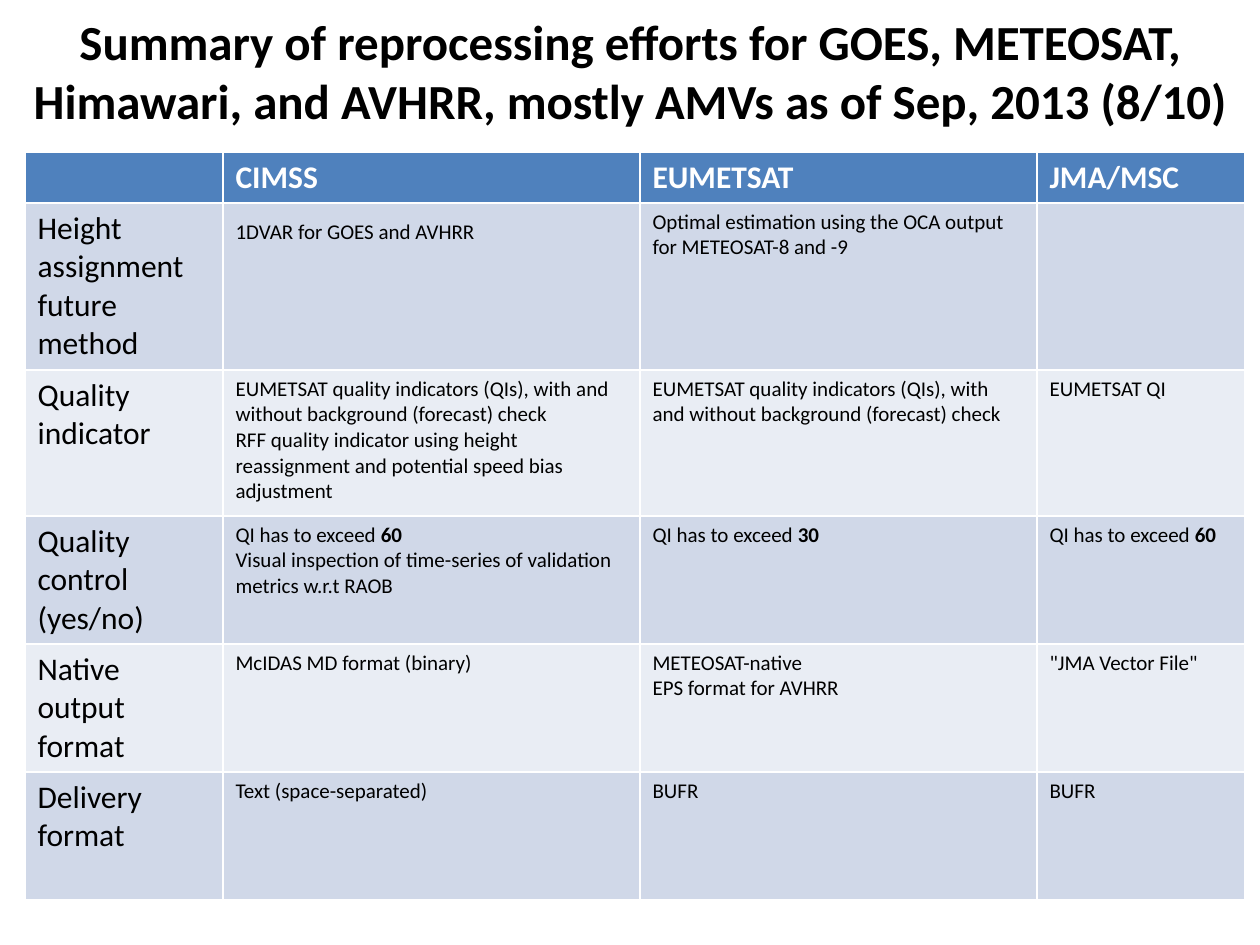
"""Build a slide with a table that sums up wind reprocessing efforts."""
from pptx import Presentation
from pptx.dml.color import RGBColor as RGB
from pptx.enum.text import MSO_ANCHOR as ANCHOR, MSO_AUTO_SIZE as AUTO, PP_ALIGN as ALIGN
from pptx.util import Pt

TITLE = ("Summary of reprocessing efforts for GOES, METEOSAT, Himawari, "
         "and AVHRR, mostly AMVs as of Sep, 2013 (8/10)")
QI = "EUMETSAT quality indicators (QIs), with and without background (forecast) check"
ROWS = [
    ["", "CIMSS", "EUMETSAT", "JMA/MSC"],
    ["Height assignment future method", "1DVAR for GOES and AVHRR",
     "Optimal estimation using the OCA output for METEOSAT-8 and -9", ""],
    ["Quality indicator",
     QI + "\nRFF quality indicator using height reassignment "
     "and potential speed bias adjustment", QI, "EUMETSAT QI"],
    ["Quality control (yes/no)",
     "QI has to exceed **60**\nVisual inspection of time-series "
     "of validation metrics w.r.t RAOB",
     "QI has to exceed **30**", "QI has to exceed **60**"],
    ["Native output format", "McIDAS MD format (binary)",
     "METEOSAT-native\nEPS format for AVHRR", '"JMA Vector File"'],
    ["Delivery format", "Text (space-separated)", "BUFR", "BUFR"],
]
WIDTHS = [198, 417, 397, 208]
HEIGHTS = [50, 167, 146, 128, 128, 128]
LOW_CELL, LOW_TOP = (1, 1), 16

BLACK, WHITE = RGB(0, 0, 0), RGB(255, 255, 255)
BLUE = RGB(0x4F, 0x81, 0xBD)
BANDS = [RGB(0xE9, 0xED, 0xF4), RGB(0xD0, 0xD8, 0xE8)]
FONT = "Calibri"
SCALE = 914400 / 126


def px(num):
    return round(num * SCALE)


def write(frame, text, size=12, color=BLACK, bold=False, align=ALIGN.LEFT):
    for i, line in enumerate(text.split("\n")):
        para = frame.add_paragraph() if i else frame.paragraphs[0]
        para.alignment = align
        para.font.size = Pt(size)
        for j, part in enumerate(line.split("**")):
            if part:
                run = para.add_run()
                run.text = part
                font = run.font
                font.name, font.size = FONT, Pt(size)
                font.bold = bold or j % 2 == 1
                font.color.rgb = color


def add_title(slide):
    title = slide.shapes.title
    title.left, title.top, title.width, title.height = map(px, (0, 6, 1260, 129))
    frame = title.text_frame
    frame.auto_size = AUTO.NONE
    frame.vertical_anchor = ANCHOR.MIDDLE
    write(frame, TITLE, size=28, bold=True, align=ALIGN.CENTER)


def add_grid(slide):
    box = map(px, (25, 152, sum(WIDTHS), sum(HEIGHTS)))
    table = slide.shapes.add_table(len(ROWS), len(WIDTHS), *box).table
    for col, width in zip(table.columns, WIDTHS):
        col.width = px(width)
    for r, (row, high) in enumerate(zip(ROWS, HEIGHTS)):
        table.rows[r].height = px(high)
        head = r == 0
        for c, text in enumerate(row):
            cell = table.cell(r, c)
            cell.fill.solid()
            cell.fill.fore_color.rgb = BLUE if head else BANDS[r % 2]
            write(cell.text_frame, text, size=18 if head or c == 0 else 12,
                  color=WHITE if head else BLACK, bold=head)
    table.cell(*LOW_CELL).margin_top = px(LOW_TOP)


def main():
    deck = Presentation()
    deck.slide_width, deck.slide_height = px(1260), px(945)
    slide = deck.slides.add_slide(deck.slide_layouts[5])
    add_title(slide)
    add_grid(slide)
    deck.save("out.pptx")


if __name__ == "__main__":
    main()
